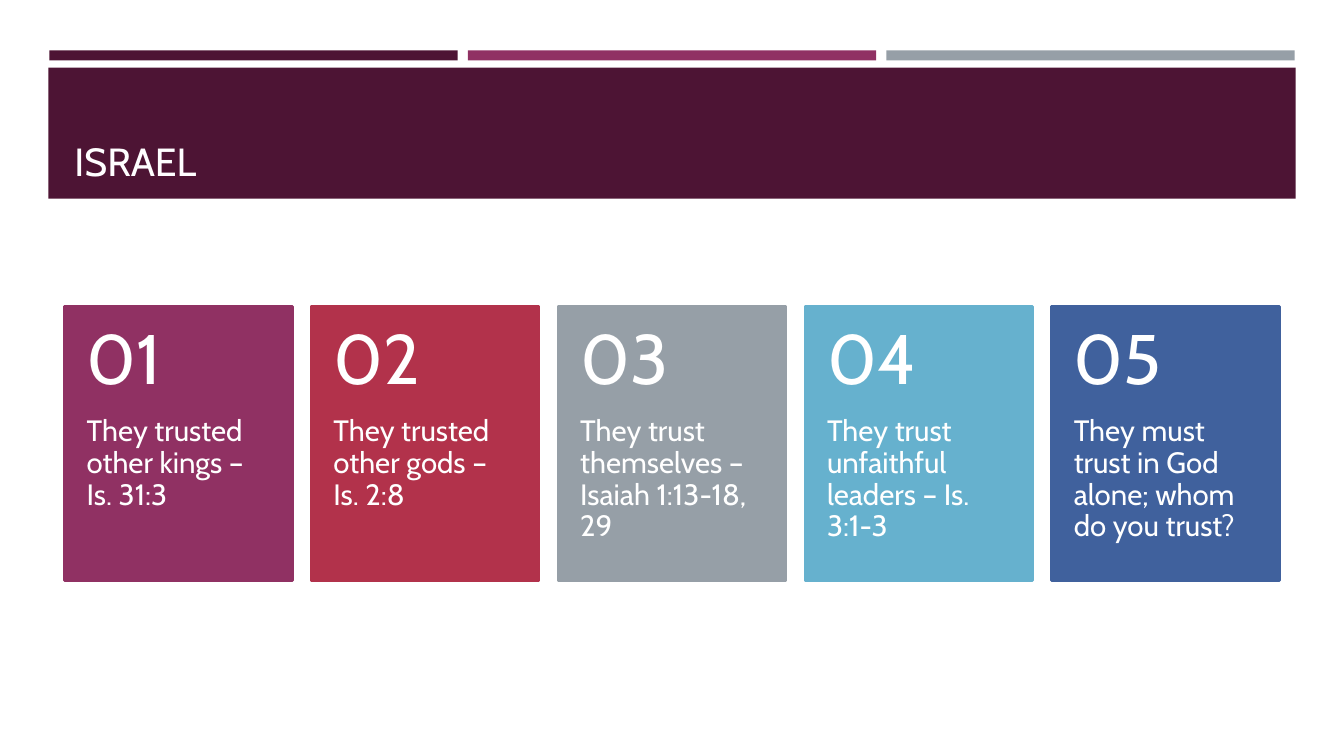
from dataclasses import dataclass

from pptx import Presentation
from pptx.dml.color import RGBColor
from pptx.enum.shapes import MSO_SHAPE as Shape
from pptx.enum.text import MSO_ANCHOR as Anchor, PP_ALIGN as Align
from pptx.util import Inches, Pt


@dataclass(frozen=True)
class Theme:
    font: str = "Cabin"
    plum: str = "4D1434"
    magenta: str = "903163"
    red: str = "B2324B"
    grey: str = "969FA7"
    sky: str = "66B1CE"
    blue: str = "40619D"
    white: str = "FFFFFF"
    title_white: str = "FFFEFF"
    title_size: int = 28
    number_size: int = 50
    body_size: int = 21


class SlideBuilder:
    def __init__(self, slide, theme):
        self.slide = slide
        self.theme = theme

    def block(self, left, top, width, height, color, line_width=None):
        """Add a filled rectangle, outlined in its own colour if a width is given."""
        block = self.slide.shapes.add_shape(
            Shape.RECTANGLE, Inches(left), Inches(top), Inches(width), Inches(height))
        block.shadow.inherit = False
        block.fill.solid()
        block.fill.fore_color.rgb = RGBColor.from_string(color)
        if line_width is None:
            block.line.fill.background()
        else:
            block.line.color.rgb = RGBColor.from_string(color)
            block.line.width = Pt(line_width)

    def text(self, left, top, width, height, words, size, color,
             insets=(0.1, 0.05, 0.1, 0.05), anchor=Anchor.TOP, spacing=1.0):
        """Add a wrapped text box; insets run left, top, right, bottom."""
        box = self.slide.shapes.add_textbox(
            Inches(left), Inches(top), Inches(width), Inches(height))
        frame = box.text_frame
        frame.word_wrap = True
        frame.vertical_anchor = anchor
        (frame.margin_left, frame.margin_top,
         frame.margin_right, frame.margin_bottom) = map(Inches, insets)
        para = frame.paragraphs[0]
        para.text = words
        para.alignment = Align.LEFT
        para.line_spacing = spacing
        para.font.name = self.theme.font
        para.font.size = Pt(size)
        para.font.color.rgb = RGBColor.from_string(color)

    def card(self, left, top, width, number, words, color):
        """Add a coloured card with a large number above its statement."""
        theme = self.theme
        number_height, body_height = 1.09, 1.63
        self.block(left, top, width, number_height + body_height, color, 1.75)
        self.text(left, top + number_height, width, body_height, words,
                  theme.body_size, theme.white, (0.22, 0, 0.22, 0.36), spacing=0.9)
        self.text(left, top, width, number_height, f"{number:02d}",
                  theme.number_size, theme.white, (0.22, 0.18, 0.22, 0.18),
                  Anchor.MIDDLE, 0.9)


def main():
    theme = Theme()
    deck = Presentation()
    deck.slide_width, deck.slide_height = Inches(13.33), Inches(7.5)
    page = SlideBuilder(deck.slides.add_slide(deck.slide_layouts[6]), theme)

    # Accent strips above the banner
    for index, color in enumerate((theme.plum, theme.magenta, theme.grey)):
        page.block(0.49 + 4.15 * index, 0.5, 4.05, 0.1, color)

    # Title banner
    page.block(0.48, 0.67, 12.37, 1.3, theme.plum)
    page.text(0.64, 0.77, 12.06, 1.11, "ISRAEL", theme.title_size,
              theme.title_white, anchor=Anchor.BOTTOM, spacing=0.9)

    # Row of numbered cards, evenly spread
    cards = (
        ("They trusted other kings – Is. 31:3", theme.magenta),
        ("They trusted other gods – Is. 2:8", theme.red),
        ("They trust themselves – Isaiah 1:13-18, 29", theme.grey),
        ("They trust unfaithful leaders – Is. 3:1-3", theme.sky),
        ("They must trust in God alone; whom do you trust?", theme.blue),
    )
    row_left, row_width, card_width = 0.64, 12.05, 2.26
    pitch = (row_width - card_width) / (len(cards) - 1)
    for index, (words, color) in enumerate(cards):
        page.card(row_left + pitch * index, 3.04, card_width, index + 1, words, color)

    deck.save("out.pptx")


if __name__ == "__main__":
    main()
